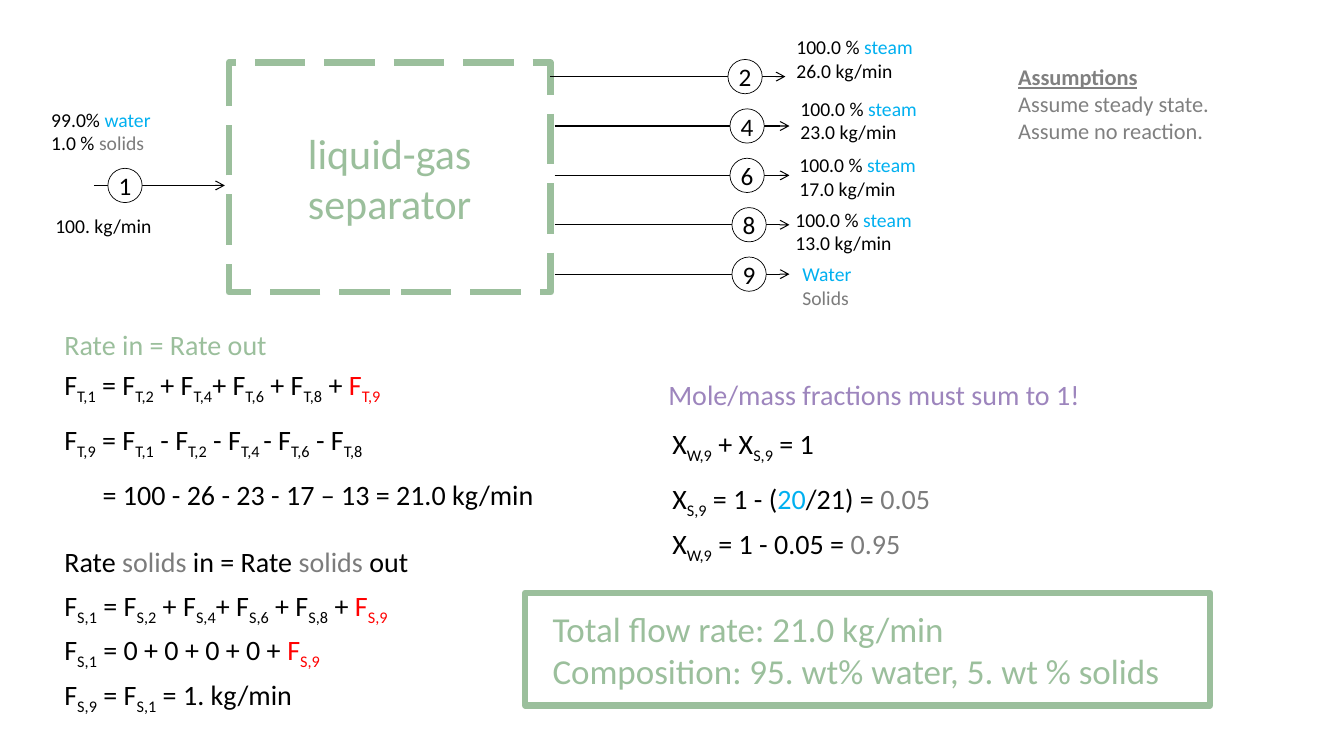
from lxml import etree
from pptx import Presentation
from pptx.dml.color import RGBColor
from pptx.enum.dml import MSO_LINE
from pptx.enum.shapes import MSO_CONNECTOR, MSO_SHAPE
from pptx.enum.text import MSO_ANCHOR, PP_ALIGN
from pptx.oxml.ns import qn
from pptx.util import Inches, Pt

LONG_DASH = MSO_LINE.LONG_DASH
STRAIGHT = MSO_CONNECTOR.STRAIGHT
RECT, OVAL = MSO_SHAPE.RECTANGLE, MSO_SHAPE.OVAL
MIDDLE = MSO_ANCHOR.MIDDLE
LEFT, CENTER = PP_ALIGN.LEFT, PP_ALIGN.CENTER

FONT = "Calibri"
COLORS = {"black": "000000", "white": "FFFFFF", "blue": "00B0F0", "gray": "7C7C7C",
          "note": "808080", "green": "9BBF9C", "red": "FF0000", "purple": "9D85BD"}


def steam(rate):
    return [[("100.0 % ", "black"), ("steam", "blue")], [(rate, "black")]]


def total_balance(kind):
    terms = f"F~{kind},1~ = F~{kind},2~ + F~{kind},4~+ F~{kind},6~ + F~{kind},8~ + "
    return [[(terms, "black"), (f"F~{kind},9~", "red")]]


# Text between tildes is subscript.
OUTLETS = [
    ("2", 5.46, 7.22, (7.8, 0.3), steam("26.0 kg/min")),
    ("4", 5.5, 7.24, (7.84, 0.91), steam("23.0 kg/min")),
    ("6", 5.5, 7.24, (7.83, 1.47), steam("17.0 kg/min")),
    ("8", 5.5, 7.26, (7.79, 2.01), steam("13.0 kg/min")),
    ("9", 5.5, 7.26, (7.86, 2.55), [[("Water", "blue")], [("Solids", "gray")]]),
]
FEED_LABELS = [
    ((0.41, 1.02, 1.44, 0.57), [[("99.0% ", "black"), ("water", "blue")],
                                [("1.0 % ", "black"), ("solids", "gray")]]),
    ((0.45, 2.07, 1.25, 0.34), [[("100. kg/min", "black")]]),
]
BALANCES = [
    (3.2, [[("Rate in = Rate out", "green")]]),
    (3.6, total_balance("T")),
    (5.35, [[("Rate ", "black"), ("solids", "gray"), (" in = Rate ", "black"),
             ("solids", "gray"), (" out", "black")]]),
    (5.79, total_balance("S")),
    (6.23, [[("F~S,1~ = 0 + 0 + 0 + 0 + ", "black"), ("F~S,9~", "red")]]),
    (6.67, [[("F~S,9~ = F~S,1~ = 1. kg/min", "black")]]),
]
BOTTOMS_RATE = [
    [("F~T,9~ = F~T,1~ - F~T,2~ - F~T,4 ~- F~T,6~ - F~T,8~", "black")],
    [("= 100 - 26 - 23 - 17 – 13 = 21.0 kg/min", "black")],
]
FRACTION_RULE = [[("Mole/mass fractions must sum to 1!", "purple")]]
FRACTIONS = [
    [("X~W,9~ + X~S,9~ = 1", "black")],
    [("X~S,9~ = 1 - (", "black"), ("20", "blue"), ("/21) = ", "black"), ("0.05", "gray")],
]
WATER_FRACTION = [[("X~W,9~ = 1 - 0.05 = ", "black"), ("0.95", "gray")]]
ASSUMPTIONS = [[("Assumptions", "note")], [("Assume steady state.", "note")],
               [("Assume no reaction.", "note")]]
ANSWER = [[("Total flow rate: 21.0 kg/min", "green")],
          [("Composition: 95. wt% water, 5. wt % solids", "green")]]

FIRST_OUTLET_Y, OUTLET_PITCH = 0.76, 0.49
OUTLET_LENGTH, CIRCLE = 2.33, 0.34
FEED_Y = 1.84


def rgb(name):
    return RGBColor.from_string(COLORS[name])


def write(tf, lines, size, align=LEFT, after=None, spacing=None):
    tf.word_wrap = True
    for i, line in enumerate(lines):
        p = tf.paragraphs[0] if i == 0 else tf.add_paragraph()
        p.alignment = align
        if after is not None:
            p.space_after = Pt(after)
        if spacing is not None:
            p.line_spacing = spacing
        for text, color in line:
            for j, part in enumerate(text.split("~")):
                if not part:
                    continue
                r = p.add_run()
                r.text = part
                r.font.name = FONT
                r.font.size = Pt(size)
                r.font.color.rgb = rgb(color)
                if j % 2:
                    r.font._element.set("baseline", "-25000")


def add_text(s, box, lines, size=20, **style):
    tf = s.shapes.add_textbox(*map(Inches, box)).text_frame
    write(tf, lines, size, **style)
    return tf


def add_box(s, kind, box, line, width, fill=None):
    sp = s.shapes.add_shape(kind, *map(Inches, box))
    sp.shadow.inherit = False
    if fill:
        sp.fill.solid()
        sp.fill.fore_color.rgb = rgb(fill)
    else:
        sp.fill.background()
    sp.line.color.rgb = rgb(line)
    sp.line.width = Pt(width)
    sp.text_frame.vertical_anchor = MIDDLE
    return sp


def add_stream(s, number, start, end, circle_left, y):
    arrow = s.shapes.add_connector(STRAIGHT, Inches(start), Inches(y), Inches(end), Inches(y))
    arrow.line.color.rgb = rgb("black")
    arrow.line.width = Pt(0.75)
    etree.SubElement(arrow.line._get_or_add_ln(), qn("a:tailEnd"), type="arrow")
    etree.SubElement(arrow._element.spPr, qn("a:effectLst"))
    sp = add_box(s, OVAL, (circle_left, y - CIRCLE / 2, CIRCLE, CIRCLE), "black", 0.5, "white")
    tf = sp.text_frame
    tf.margin_left = tf.margin_right = tf.margin_top = tf.margin_bottom = 0
    write(tf, [[(number, "black")]], 18, align=CENTER)


def main():
    prs = Presentation()
    prs.slide_width, prs.slide_height = Inches(13.33), Inches(7.5)
    s = prs.slides.add_slide(prs.slide_layouts[6])

    separator = add_box(s, RECT, (2.27, 0.62, 3.19, 2.28), "green", 4.5, "white")
    separator.line.dash_style = LONG_DASH
    write(separator.text_frame, [[("liquid-gas separator", "green")]], 30, align=CENTER)

    add_stream(s, "1", 0.93, 2.23, 1.07, FEED_Y)
    for box, lines in FEED_LABELS:
        add_text(s, box, lines, 14)
    for i, (number, start, circle_left, label_at, lines) in enumerate(OUTLETS):
        y = FIRST_OUTLET_Y + i * OUTLET_PITCH
        add_stream(s, number, start, start + OUTLET_LENGTH, circle_left, y)
        add_text(s, (*label_at, 1.65, 0.57), lines, 14)

    tf = add_text(s, (10, 0.58, 2.56, 0.91), ASSUMPTIONS, 16)
    heading = tf.paragraphs[0].runs[0].font
    heading.bold = heading.underline = True

    for top, lines in BALANCES:
        add_text(s, (0.54, top, 4.23, 0.44), lines)
    tf = add_text(s, (0.54, 3.95, 4.87, 1.06), BOTTOMS_RATE, spacing=1.5)
    pPr = tf.paragraphs[1]._p.get_or_add_pPr()
    pPr.set("marL", str(Inches(0.38)))
    pPr.set("indent", "0")

    add_text(s, (6.53, 3.7, 6.13, 0.44), FRACTION_RULE)
    add_text(s, (6.57, 4.18, 3.03, 0.94), FRACTIONS, after=12)
    add_text(s, (6.57, 5.17, 3.03, 0.44), WATER_FRACTION, after=12)

    answer = add_box(s, RECT, (5.21, 5.88, 6.79, 1.12), "green", 4.5)
    answer.text_frame.margin_left = Inches(0.27)
    write(answer.text_frame, ANSWER, 25)

    prs.save("out.pptx")


if __name__ == "__main__":
    main()
